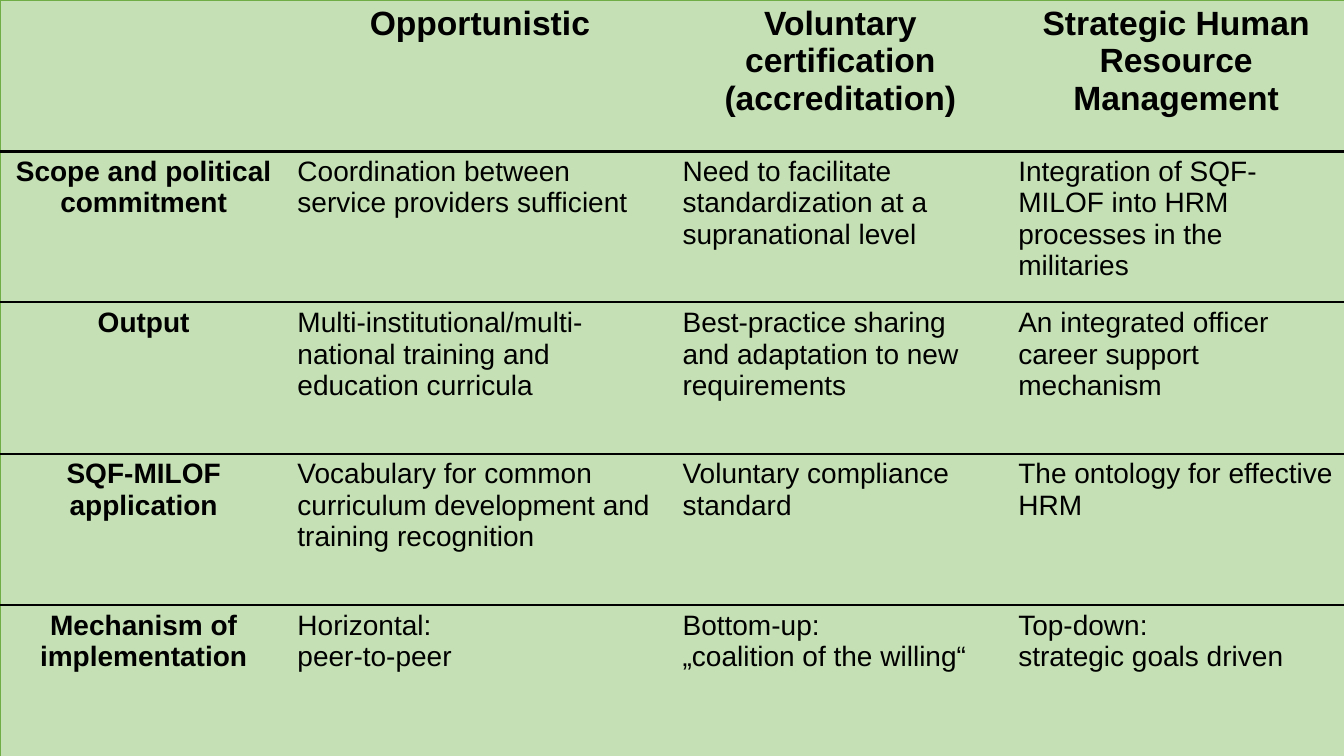
from dataclasses import dataclass

from lxml.etree import SubElement
from pptx import Presentation
from pptx.dml.color import RGBColor
from pptx.enum.text import PP_ALIGN
from pptx.oxml.ns import qn
from pptx.util import Inches, Pt


@dataclass(frozen=True)
class Theme:
    font: str = "Arial"
    head_size: int = 24
    body_size: int = 20
    text: str = "000000"
    cell: str = "C5E0B4"
    frame: tuple = ("70AD47", 0.5)
    head_rule: tuple = ("000000", 2.25)
    row_rule: tuple = ("000000", 1.5)


THEME = Theme()
SLIDE_W, SLIDE_H = 13.33, 7.5
COLUMN_WIDTHS = [2.85, 3.82, 3.33, 3.33]
ROWS = [
    ["", "Opportunistic", "Voluntary certification (accreditation)",
     "Strategic Human Resource Management"],
    ["Scope and political commitment",
     "Coordination between service providers sufficient",
     "Need to facilitate standardization at a supranational level",
     "Integration of SQF-MILOF into HRM processes in the militaries"],
    ["Output",
     "Multi-institutional/multi-national training and education curricula",
     "Best-practice sharing and adaptation to new requirements",
     "An integrated officer career support mechanism"],
    ["SQF-MILOF application",
     "Vocabulary for common curriculum development and training recognition",
     "Voluntary compliance standard",
     "The ontology for effective HRM"],
    ["Mechanism of implementation",
     "Horizontal:\vpeer-to-peer",
     "Bottom-up:\v„coalition of the willing“",
     "Top-down:\vstrategic goals driven"],
]


def set_border(cell, side, rule):
    tc_pr = cell._tc.get_or_add_tcPr()
    ln = SubElement(tc_pr, qn(f"a:ln{side}"))
    if rule is None:
        SubElement(ln, qn("a:noFill"))
        return
    color, width = rule
    ln.set("w", str(Pt(width)))
    fill = SubElement(ln, qn("a:solidFill"))
    SubElement(fill, qn("a:srgbClr")).set("val", color)


def row_rules(count):
    inner = [THEME.row_rule] * (count - 2)
    return [THEME.frame, THEME.head_rule, *inner, THEME.frame]


def fill_cell(cell, text, is_head, is_label):
    cell.fill.solid()
    cell.fill.fore_color.rgb = RGBColor.from_string(THEME.cell)
    p = cell.text_frame.paragraphs[0]
    p.text = text
    p.alignment = PP_ALIGN.CENTER if is_head or is_label else PP_ALIGN.LEFT
    for r in p.runs:
        r.font.name = THEME.font
        r.font.size = Pt(THEME.head_size if is_head else THEME.body_size)
        r.font.bold = is_head or is_label
        r.font.color.rgb = RGBColor.from_string(THEME.text)


def add_comparison(s, left, top, width, height):
    n_rows, n_cols = len(ROWS), len(COLUMN_WIDTHS)
    table = s.shapes.add_table(n_rows, n_cols, Inches(left), Inches(top),
                               Inches(width), Inches(height)).table
    table.horz_banding = False
    table.first_row = False
    for column, share in zip(table.columns, COLUMN_WIDTHS):
        column.width = Inches(width * share / sum(COLUMN_WIDTHS))
    for row in table.rows:
        row.height = Inches(height / n_rows)

    rules = row_rules(n_rows)
    for i, texts in enumerate(ROWS):
        for j, text in enumerate(texts):
            cell = table.cell(i, j)
            set_border(cell, "L", THEME.frame if j == 0 else None)
            set_border(cell, "R", THEME.frame if j == n_cols - 1 else None)
            set_border(cell, "T", rules[i])
            set_border(cell, "B", rules[i + 1])
            fill_cell(cell, text, i == 0, j == 0)


def main():
    prs = Presentation()
    prs.slide_width, prs.slide_height = Inches(SLIDE_W), Inches(SLIDE_H)
    s = prs.slides.add_slide(prs.slide_layouts[6])
    add_comparison(s, 0, 0, SLIDE_W, SLIDE_H)
    prs.save("out.pptx")


if __name__ == "__main__":
    main()
